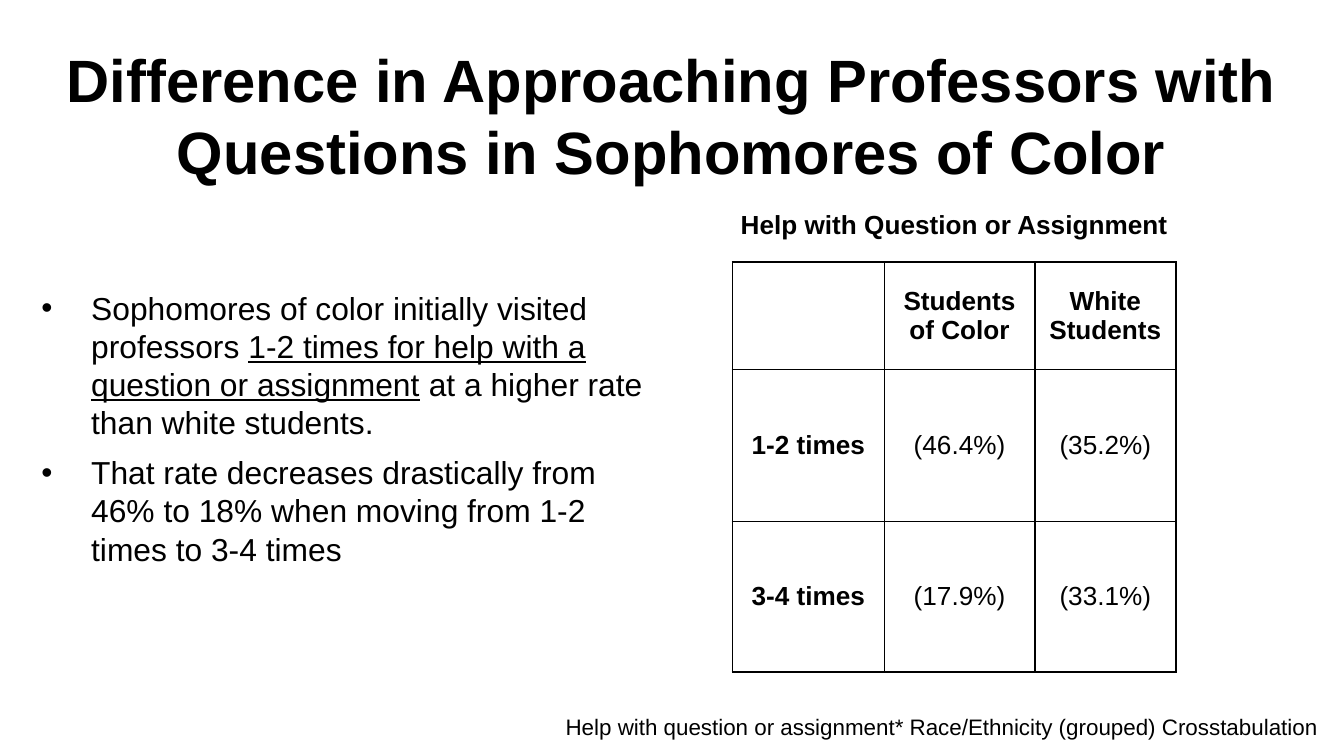
from pptx import Presentation
from pptx.dml.color import RGBColor
from pptx.enum import text
from pptx.oxml import parse_xml
from pptx.oxml.ns import nsdecls
from pptx.util import Inches, Pt

FONT = "Arial"
BLACK = "000000"
WHITE = "FFFFFF"
ALIGN = text.PP_ALIGN


def rgb(value):
    return RGBColor.from_string(value)


def add_run(p, content, size=14, bold=False, underline=False, color=BLACK):
    r = p.add_run()
    r.text = content
    f = r.font
    f.name, f.size, f.bold, f.underline = FONT, Pt(size), bold, underline
    f.color.rgb = rgb(color)


def add_textbox(s, left, top, width, height, inset_y=0.1):
    tf = s.shapes.add_textbox(*map(Inches, (left, top, width, height))).text_frame
    tf.word_wrap = True
    tf.margin_top = tf.margin_bottom = Inches(inset_y)
    return tf


def add_label(s, box, content, align=ALIGN.LEFT, **fmt):
    p = add_textbox(s, *box).paragraphs[0]
    p.alignment = align
    add_run(p, content, **fmt)


def set_title(s, content):
    sp = s.shapes.title
    sp.left, sp.top, sp.width, sp.height = map(Inches, (0.05, 0.2, 9.9, 1.31))
    sp.line.color.rgb = rgb(WHITE)
    sp.line.width = Pt(1.5)
    tf = sp.text_frame
    tf.auto_size = text.MSO_AUTO_SIZE.NONE
    tf.vertical_anchor = text.MSO_ANCHOR.MIDDLE
    p = tf.paragraphs[0]
    p.alignment = ALIGN.CENTER
    add_run(p, content, size=32, bold=True)


def set_bullet(p, indent=0.5, hanging=0.37):
    pPr = p._p.get_or_add_pPr()
    pPr.set("marL", str(Inches(indent)))
    pPr.set("indent", str(-Inches(hanging)))
    ns = nsdecls("a")
    pPr.append(parse_xml(f'<a:buClr {ns}><a:srgbClr val="{BLACK}"/></a:buClr>'))
    pPr.append(parse_xml(f'<a:buFont {ns} typeface="{FONT}"/>'))
    pPr.append(parse_xml(f'<a:buChar {ns} char="•"/>'))


def add_bullets(s, box, items):
    """Each item is a list of (text, underlined) pairs."""
    tf = add_textbox(s, *box, inset_y=0.05)
    for i, item in enumerate(items):
        p = tf.add_paragraph() if i else tf.paragraphs[0]
        p.space_before = Pt(6.4)
        set_bullet(p)
        for content, underline in item:
            add_run(p, content, size=17, underline=underline)


def set_borders(cell, width=1):
    tcPr = cell._tc.get_or_add_tcPr()
    for i, side in enumerate(("lnL", "lnR", "lnT", "lnB")):
        tcPr.insert(i, parse_xml(
            f'<a:{side} {nsdecls("a")} w="{Pt(width)}"><a:solidFill>'
            f'<a:srgbClr val="{BLACK}"/></a:solidFill></a:{side}>'))


def add_grid(s, left, top, col_widths, row_heights, rows):
    """Table whose first row and first column are bold headings."""
    frame = s.shapes.add_table(
        len(rows), len(col_widths), Inches(left), Inches(top),
        Inches(sum(col_widths)), Inches(sum(row_heights)))
    table = frame.table
    table.first_row = table.horz_banding = False
    for col, width in zip(table.columns, col_widths):
        col.width = Inches(width)
    for row, height in zip(table.rows, row_heights):
        row.height = Inches(height)
    for i, values in enumerate(rows):
        for j, value in enumerate(values):
            cell = table.cell(i, j)
            cell.fill.background()
            set_borders(cell)
            cell.vertical_anchor = text.MSO_ANCHOR.MIDDLE
            p = cell.text_frame.paragraphs[0]
            p.alignment = ALIGN.CENTER
            if value:
                add_run(p, value, bold=i == 0 or j == 0)


def main():
    prs = Presentation()
    prs.slide_width = Inches(10)
    prs.slide_height = prs.slide_width * 9 // 16
    s = prs.slides.add_slide(prs.slide_layouts[5])

    set_title(s, "Difference in Approaching Professors with "
                 "Questions in Sophomores of Color")
    add_bullets(s, (0.08, 2.1, 4.92, 2.76), [
        [("Sophomores of color initially visited professors ", False),
         ("1-2 times for help with a question or assignment", True),
         (" at a higher rate than white students.", False)],
        [("That rate decreases drastically from 46% to 18% when moving "
          "from 1-2 times to 3-4 times", False)],
    ])
    add_label(s, (4.11, 5.21, 5.98, 0.51),
              "Help with question or assignment* Race/Ethnicity (grouped) "
              "Crosstabulation", size=12)
    add_grid(s, 5.45, 1.95, (1.13, 1.12, 1.05), (0.8, 1.13, 1.12), [
        ("", "Students of Color", "White Students"),
        ("1-2 times", "(46.4%)", "(35.2%)"),
        ("3-4 times", "(17.9%)", "(33.1%)"),
    ])
    add_label(s, (5.2, 1.45, 3.8, 0.3), "Help with Question or Assignment",
              align=ALIGN.CENTER, bold=True)
    prs.save("out.pptx")


if __name__ == "__main__":
    main()
